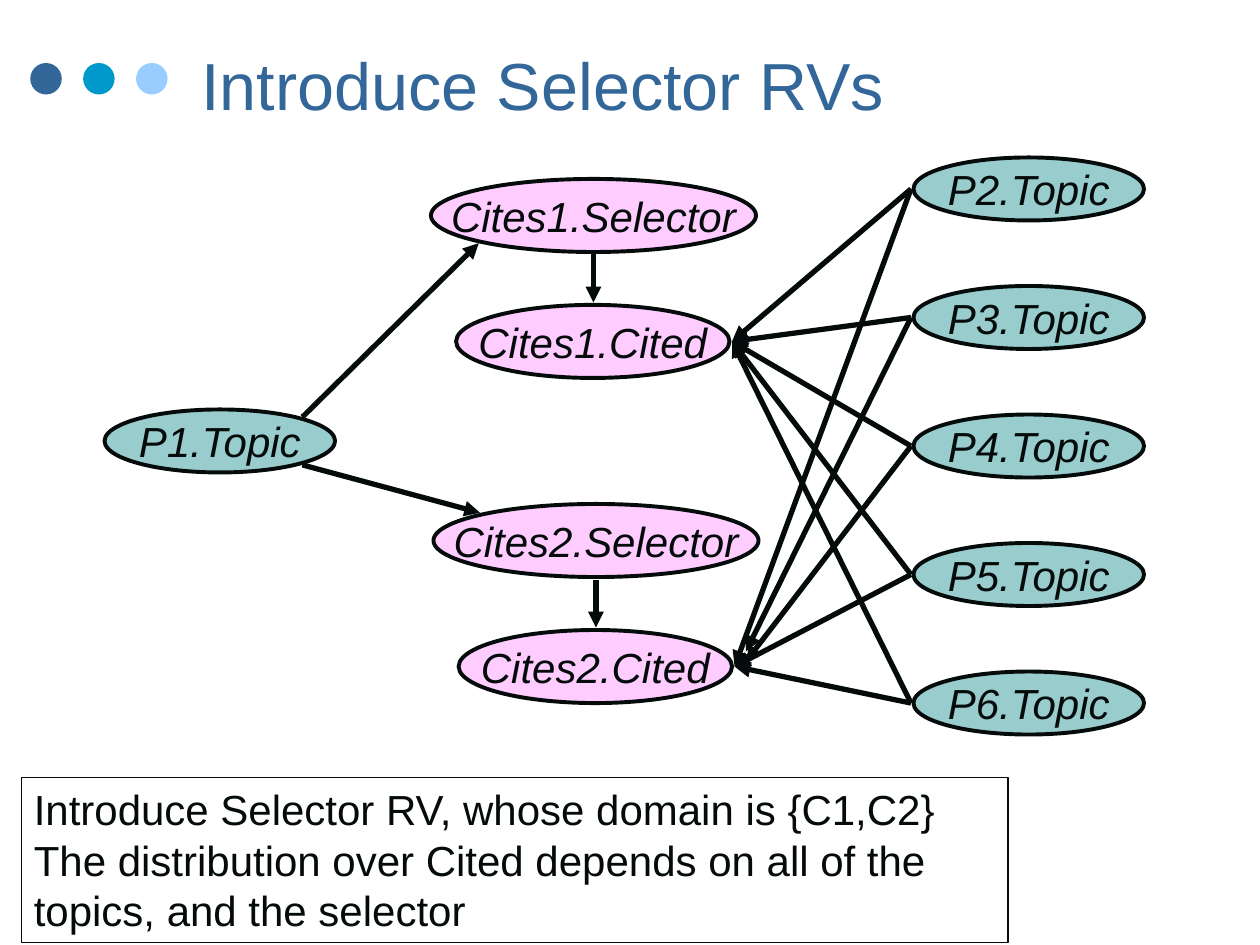
from lxml import etree
from pptx import Presentation
from pptx import util as u
from pptx.dml.color import RGBColor
from pptx.enum import shapes, text
from pptx.oxml.ns import qn

INK, BLUE, PINK, TEAL = "050B0B", "336699", "FFCCFF", "99CCCC"


def color(value):
    return RGBColor.from_string(value)


class SlideBuilder:
    font_name = "Arial"
    body_size = 24

    def __init__(self, slide):
        self.slide = slide

    def style(self, paragraph, size, ink, italic=False):
        font = paragraph.font
        font.name, font.size, font.italic = self.font_name, u.Pt(size), italic
        font.color.rgb = color(ink)

    def ellipse(self, left, top, width, height, fill):
        shape = self.slide.shapes.add_shape(
            shapes.MSO_SHAPE.OVAL,
            *map(u.Inches, (left, top, width, height)))
        shape.shadow.inherit = False
        shape.fill.solid()
        shape.fill.fore_color.rgb = color(fill)
        shape.line.fill.background()
        return shape

    def node(self, label, left, top, width, height, fill):
        shape = self.ellipse(left, top, width, height, fill)
        shape.line.color.rgb = color(INK)
        shape.line.width = u.Pt(2.25)
        frame = shape.text_frame
        frame.word_wrap = False
        frame.vertical_anchor = text.MSO_ANCHOR.MIDDLE
        paragraph = frame.paragraphs[0]
        paragraph.text = label
        paragraph.alignment = text.PP_ALIGN.CENTER
        self.style(paragraph, self.body_size, INK, italic=True)

    def arrow(self, start, end):
        connector = self.slide.shapes.add_connector(
            shapes.MSO_CONNECTOR.STRAIGHT, *map(u.Inches, (*start, *end)))
        connector.line.color.rgb = color(INK)
        connector.line.width = u.Pt(3)
        line = connector.line._get_or_add_ln()
        etree.SubElement(line, qn("a:tailEnd"), type="triangle")
        etree.SubElement(connector._element.spPr, qn("a:effectLst"))

    def text_box(self, lines, left, top, width, height, size, ink):
        box = self.slide.shapes.add_textbox(
            *map(u.Inches, (left, top, width, height)))
        frame = box.text_frame
        frame.word_wrap = True
        frame.vertical_anchor = text.MSO_ANCHOR.MIDDLE
        for index, line in enumerate(lines):
            paragraph = frame.add_paragraph() if index else frame.paragraphs[0]
            paragraph.text = line
            self.style(paragraph, size, ink)
        return box


def main():
    presentation = Presentation()
    presentation.slide_width = u.Inches(10)
    presentation.slide_height = u.Inches(7.5)
    slide = presentation.slides.add_slide(presentation.slide_layouts[6])
    builder = SlideBuilder(slide)

    # Title with its three dots
    for index, fill in enumerate((BLUE, "0099CC", "99CCFF")):
        builder.ellipse(0.24 + 0.42 * index, 0.5, 0.25, 0.25, fill)
    builder.text_box(["Introduce Selector RVs"], 1.5, 0.25, 7.67, 0.83, 38, BLUE)

    # Citing paper
    builder.node("P1.Topic", 0.83, 3.25, 1.83, 0.5, TEAL)

    # Citations: each selector sits one inch above its cited node
    for number, center, top in ((1, 4.71, 1.42), (2, 4.73, 4)):
        builder.node(f"Cites{number}.Cited", center - 1.09, top + 1, 2.17, 0.58, PINK)
        builder.node(f"Cites{number}.Selector", center - 1.29, top, 2.58, 0.58, PINK)
        builder.arrow((center, top + 0.6), (center, top + 0.98))
    builder.arrow((2.4, 3.31), (3.8, 1.93))
    builder.arrow((2.4, 3.69), (3.81, 4.07))

    # Candidate papers, each linked to both cited nodes
    first_cited, second_cited = (5.81, 2.71), (5.83, 5.29)
    second_ends = {3: (5.92, 5.17), 4: (5.92, 5.25)}
    for number in range(2, 7):
        top = 1.25 + 1.02 * (number - 2)
        builder.node(f"P{number}.Topic", 7.25, top, 1.83, 0.5, TEAL)
        for end in (first_cited, second_ends.get(number, second_cited)):
            builder.arrow((7.23, top + 0.25), end)

    # Explanation
    caption = builder.text_box(
        ["Introduce Selector RV, whose domain is {C1,C2}",
         "The distribution over Cited depends on all of the topics, and the selector"],
        0.17, 6.17, 7.83, 1.31, builder.body_size, INK)
    caption.text_frame.vertical_anchor = text.MSO_ANCHOR.TOP
    caption.text_frame.auto_size = text.MSO_AUTO_SIZE.SHAPE_TO_FIT_TEXT
    caption.line.color.rgb = color(INK)
    caption.line.width = u.Pt(0.75)

    presentation.save("out.pptx")


if __name__ == "__main__":
    main()
